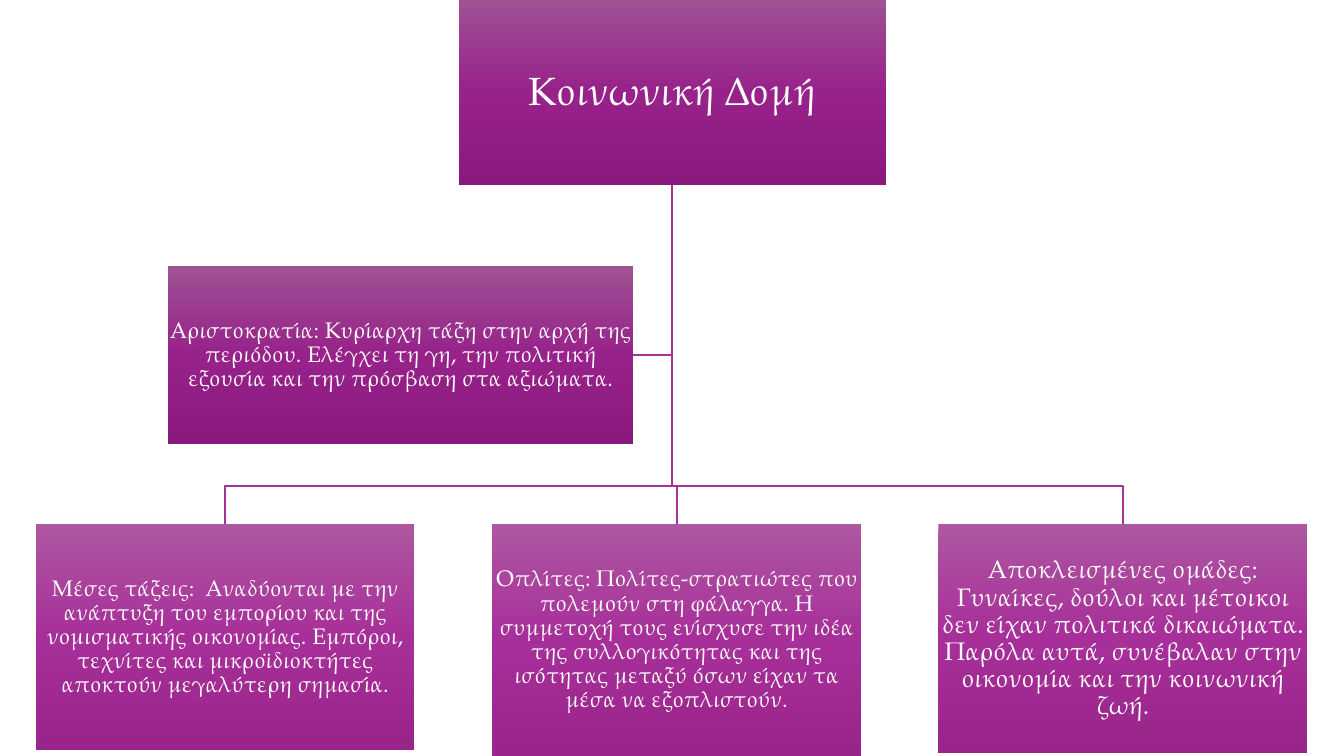
import copy
import pptx
import pptx.util
import pptx.dml.color
import pptx.enum.shapes
import pptx.enum.text

Cm = pptx.util.Cm
Pt = pptx.util.Pt
RGB = pptx.dml.color.RGBColor

FONT = "TeX Gyre Pagella"
WHITE = RGB(0xFF, 0xFF, 0xFF)
LINE = RGB(0xA1, 0x35, 0x95)
DARK = [RGB(0x9F, 0x51, 0x94), RGB(0x97, 0x22, 0x8A), RGB(0x8A, 0x19, 0x7E)]
LIGHT = [RGB(0xAD, 0x57, 0xA1), RGB(0xA7, 0x2F, 0x99), RGB(0x99, 0x25, 0x8B)]

ROW = 13.21
BUS = 12.24

ROOT = ("Κοινωνική Δομή", 28, (11.56, 0, 10.77, 4.66))
ASIDE = (
    "Αριστοκρατία: Κυρίαρχη τάξη στην αρχή της περιόδου. Ελέγχει τη γη, "
    "την πολιτική εξουσία και την πρόσβαση στα αξιώματα.",
    16, (4.24, 6.71, 11.71, 4.47))
GROUPS = [
    ("Μέσες τάξεις:  Αναδύονται με την ανάπτυξη του εμπορίου και της "
     "νομισματικής οικονομίας. Εμπόροι, τεχνίτες και μικροϊδιοκτήτες "
     "αποκτούν μεγαλύτερη σημασία.",
     16, (0.91, ROW, 9.53, 5.69)),
    ("Οπλίτες: Πολίτες-στρατιώτες που πολεμούν στη φάλαγγα. Η συμμετοχή "
     "τους ενίσχυσε την ιδέα της συλλογικότητας και της ισότητας μεταξύ "
     "όσων είχαν τα μέσα να εξοπλιστούν.",
     16, (12.4, ROW, 9.3, 5.84)),
    ("Αποκλεισμένες ομάδες: Γυναίκες, δούλοι και μέτοικοι δεν είχαν "
     "πολιτικά δικαιώματα. Παρόλα αυτά, συνέβαλαν στην οικονομία και την "
     "κοινωνική ζωή.",
     18, (23.65, ROW, 9.3, 5.77)),
]


def draw_line(slide, points):
    spots = [(Cm(x), Cm(y)) for x, y in points]
    pen = slide.shapes.build_freeform(*spots[0])
    pen.add_line_segments(spots[1:], close=False)
    line = pen.convert_to_shape()
    line.shadow.inherit = False
    line.fill.background()
    line.line.color.rgb = LINE
    line.line.width = Pt(1.5)


def shade(box, tones):
    box.fill.gradient()
    box.fill.gradient_angle = 270
    stops = box._element.xpath(".//a:gsLst")[0]
    stops.insert(1, copy.deepcopy(stops[0]))
    for stop, place, tone in zip(box.fill.gradient_stops, (0, 0.5, 1), tones):
        stop.position = place
        stop.color.rgb = tone


def draw_box(slide, card, tones, inset=0.03):
    text, size, rect = card
    box = slide.shapes.add_shape(
        pptx.enum.shapes.MSO_SHAPE.RECTANGLE, *[Cm(v) for v in rect])
    box.shadow.inherit = False
    box.line.fill.background()
    shade(box, tones)
    frame = box.text_frame
    frame.word_wrap = True
    frame.vertical_anchor = pptx.enum.text.MSO_ANCHOR.MIDDLE
    frame.margin_left = frame.margin_right = Cm(inset)
    frame.margin_top = frame.margin_bottom = Cm(inset)
    para = frame.paragraphs[0]
    para.alignment = pptx.enum.text.PP_ALIGN.CENTER
    para.line_spacing = 0.9
    run = para.add_run()
    run.text = text
    run.font.size = Pt(size)
    run.font.name = FONT
    run.font.color.rgb = WHITE


def main():
    deck = pptx.Presentation()
    deck.slide_width, deck.slide_height = Cm(33.87), Cm(19.05)
    slide = deck.slides.add_slide(deck.slide_layouts[6])

    left, top, width, height = ROOT[2]
    stem, base = left + width / 2, top + height
    left, top, width, height = ASIDE[2]
    level = top + height / 2
    draw_line(slide, [(stem, base), (stem, level), (left + width, level)])
    for text, size, (left, top, width, height) in GROUPS:
        mid = left + width / 2
        draw_line(slide, [(stem, base), (stem, BUS), (mid, BUS), (mid, top)])

    draw_box(slide, ROOT, DARK, 0.05)
    for card in GROUPS:
        draw_box(slide, card, LIGHT)
    draw_box(slide, ASIDE, DARK)
    deck.save("out.pptx")


if __name__ == "__main__":
    main()
